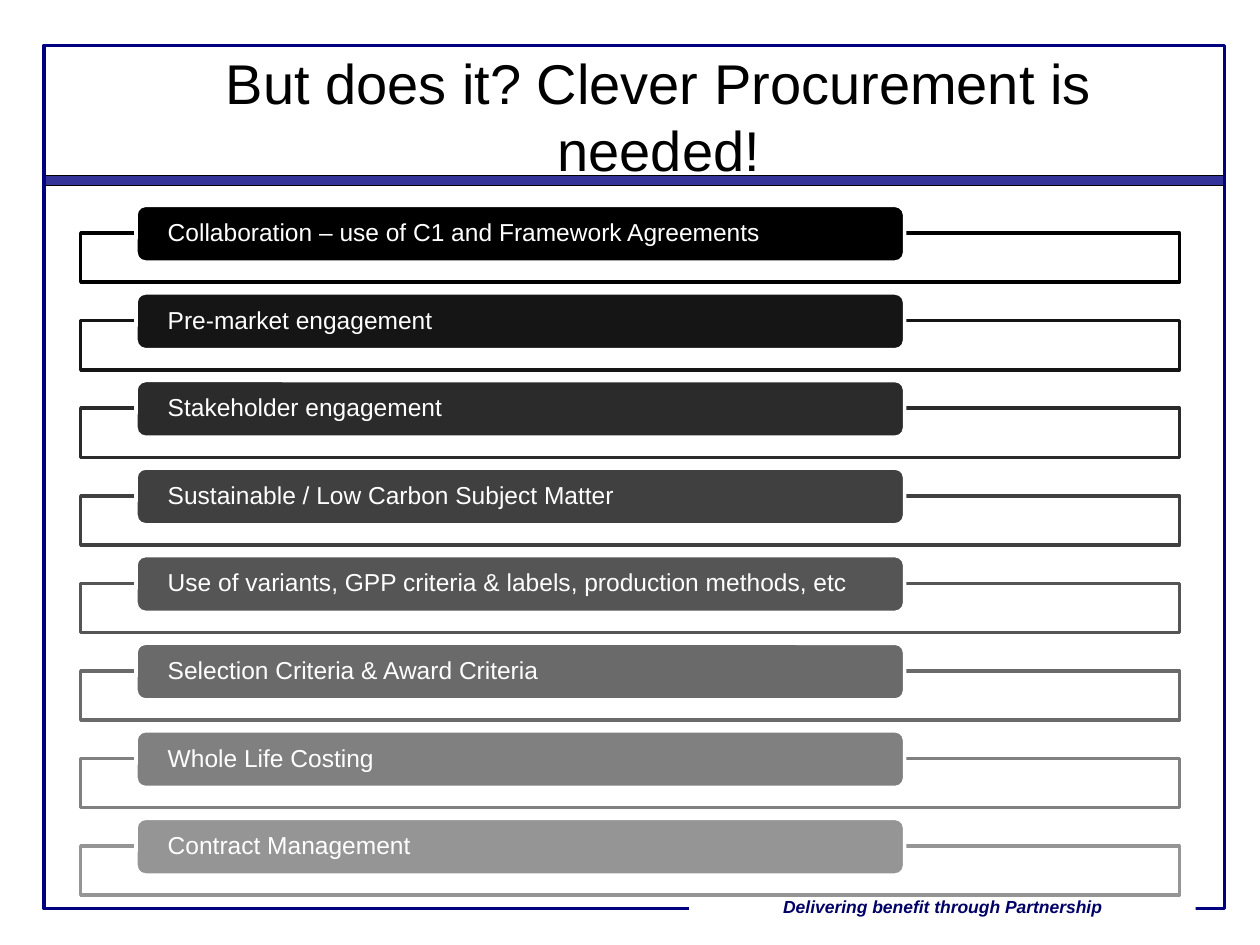
"""Build the clever procurement slide: a framed title over eight graded bars."""
from lxml.etree import SubElement
from pptx import Presentation
from pptx.dml.color import RGBColor
from pptx.enum.shapes import MSO_SHAPE
from pptx.enum.text import MSO_ANCHOR, PP_ALIGN
from pptx.oxml.ns import qn
from pptx.util import Inches, Pt

prs = Presentation()
prs.slide_width, prs.slide_height = Inches(10), Inches(7.5)
s = prs.slides.add_slide(prs.slide_layouts[6])
COL, ROW = prs.slide_width / 100, prs.slide_height / 75


def box(kind, x, y, w, h, fill=None, line=None, width=2):
    sp = s.shapes.add_shape(kind, round(x * COL), round(y * ROW), round(w * COL), round(h * ROW))
    sp.shadow.inherit = False
    if fill:
        sp.fill.solid()
        sp.fill.fore_color.rgb = RGBColor.from_string(fill)
    else:
        sp.fill.background()
    if line:
        sp.line.color.rgb = RGBColor.from_string(line)
        sp.line.width = Pt(width)
    else:
        sp.line.fill.background()
    return sp


def write(sp, text, size, color, align, bold=False):
    tf = sp.text_frame
    tf.word_wrap = True
    tf.vertical_anchor = MSO_ANCHOR.MIDDLE
    p = tf.paragraphs[0]
    p.alignment = align
    r = p.add_run()
    r.text = text
    r.font.name, r.font.size = "Arial", Pt(size)
    r.font.bold = r.font.italic = bold
    r.font.color.rgb = RGBColor.from_string(color)
    return tf


box(MSO_SHAPE.RECTANGLE, 3.5, 13.9, 93.7, 0.8, "333399", "000000", 0.75)
box(MSO_SHAPE.RECTANGLE, 3.5, 3.6, 93.7, 68.5, line="000080")
footer = box(MSO_SHAPE.RECTANGLE, 54.7, 70.6, 40.2, 2.7, "FFFFFF")
write(footer, "Delivering benefit through Partnership", 10, "000066", PP_ALIGN.CENTER, True)

title = s.shapes.add_textbox(round(16.1 * COL), round(5.2 * ROW), round(72.4 * COL), round(7.9 * ROW))
write(title, "But does it? Clever Procurement is needed!", 32, "000000", PP_ALIGN.CENTER)

steps = [
    "Collaboration – use of C1 and Framework Agreements",
    "Pre-market engagement",
    "Stakeholder engagement",
    "Sustainable / Low Carbon Subject Matter",
    "Use of variants, GPP criteria & labels, production methods, etc",
    "Selection Criteria & Award Criteria",
    "Whole Life Costing",
    "Contract Management",
]
for i, step in enumerate(steps):
    y = 16.3 + 6.95 * i
    grey = f"{round(149 * i / 7):02X}" * 3
    frame = box(MSO_SHAPE.RECTANGLE, 6.4, y + 2.2, 87.2, 3.9, "FFFFFF", grey)
    clr = frame.fill._xPr.find(qn("a:solidFill")).find(qn("a:srgbClr"))
    SubElement(clr, qn("a:alpha")).set("val", "90000")
    bar = box(MSO_SHAPE.ROUNDED_RECTANGLE, 10.8, y, 61, 4.5, grey, "FFFFFF")
    tf = write(bar, step, 14, "FFFFFF", PP_ALIGN.LEFT)
    tf.margin_left = tf.margin_right = Inches(0.23)
    tf.margin_top = tf.margin_bottom = 0
    tf.paragraphs[0].line_spacing = 0.9

prs.save("out.pptx")
